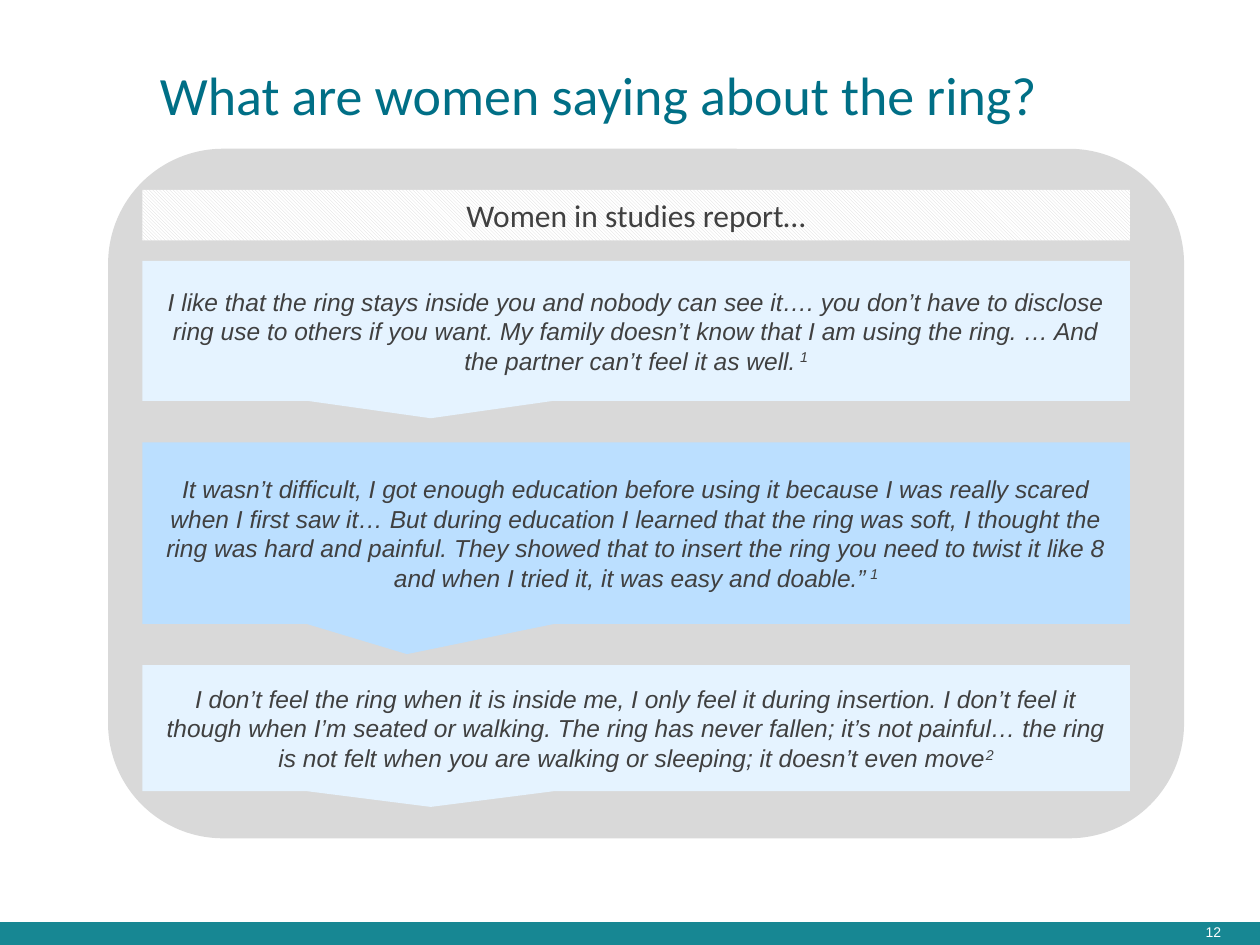
from pptx import Presentation
from pptx.dml.color import RGBColor
from pptx.enum.dml import MSO_PATTERN
from pptx.enum.shapes import MSO_SHAPE as Shape
from pptx.enum.text import MSO_ANCHOR as Anchor, PP_ALIGN as Align
from pptx.util import Cm, Pt

COLOURS = {
    "teal": "178793", "title": "006F86", "panel": "D9D9D9", "white": "FFFFFF",
    "pale": "E5F3FF", "blue": "BBDFFF", "text": "404040",
}
LEFT, WIDTH = 2.87, 19.91  # shared column of the heading and quotes


def colour(name):
    return RGBColor.from_string(COLOURS[name])


class SlideBuilder:
    """Holds the text style and the current slide; lengths are in cm."""

    def __init__(self, slide, heading_font="Calibri", body_font="Arial"):
        self.slide = slide
        self.heading_font = heading_font
        self.body_font = body_font

    def style(self, paragraph, font_name, size, colour_name, align, italic=False):
        paragraph.alignment = align
        for run in paragraph.runs:
            font = run.font
            font.name, font.size, font.italic = font_name, Pt(size), italic
            font.color.rgb = colour(colour_name)

    def title(self, text, left, top, width, height):
        title = self.slide.shapes.title
        title.left, title.top = Cm(left), Cm(top)
        title.width, title.height = Cm(width), Cm(height)
        frame = title.text_frame
        frame.text = text
        frame.vertical_anchor = Anchor.MIDDLE
        frame.paragraphs[0].line_spacing = 0.8
        self.style(frame.paragraphs[0], self.heading_font, 30.8, "title", Align.LEFT)

    def block(self, kind, left, top, width, height, fill):
        block = self.slide.shapes.add_shape(
            kind, Cm(left), Cm(top), Cm(width), Cm(height))
        block.shadow.inherit = False
        block.line.fill.background()
        block.fill.solid()
        block.fill.fore_color.rgb = colour(fill)
        block.text_frame.word_wrap = True
        block.text_frame.vertical_anchor = Anchor.MIDDLE
        return block

    def heading(self, text, top, height):
        heading = self.block(Shape.RECTANGLE, LEFT, top, WIDTH, height, "white")
        heading.fill.patterned()
        heading.fill.pattern = MSO_PATTERN.LIGHT_DOWNWARD_DIAGONAL
        heading.fill.fore_color.rgb = colour("panel")
        heading.fill.back_color.rgb = colour("white")
        heading.text_frame.text = text
        paragraph = heading.text_frame.paragraphs[0]
        paragraph.space_after = Pt(6)
        self.style(paragraph, self.heading_font, 18, "text", Align.CENTER)

    def quote(self, text, reference, top, height, fill, tip=(-0.208, 0.625)):
        quote = self.block(Shape.RECTANGULAR_CALLOUT, LEFT, top, WIDTH, height, fill)
        quote.adjustments[0], quote.adjustments[1] = tip
        quote.text_frame.text = text
        paragraph = quote.text_frame.paragraphs[0]
        mark = paragraph.add_run()
        mark.text = reference
        self.style(paragraph, self.body_font, 14, "text", Align.CENTER, italic=True)
        mark.font._element.set("baseline", "30000")

    def page_number(self, text, left, top, width, height):
        number = self.slide.shapes.add_textbox(
            Cm(left), Cm(top), Cm(width), Cm(height))
        frame = number.text_frame
        frame.word_wrap = True
        frame.margin_top = frame.margin_bottom = 0
        frame.vertical_anchor = Anchor.MIDDLE
        frame.text = text
        self.style(frame.paragraphs[0], self.body_font, 8, "white", Align.RIGHT)


def main():
    deck = Presentation()
    deck.slide_width, deck.slide_height = Cm(25.4), Cm(19.05)
    title_only = deck.slide_layouts[5]
    builder = SlideBuilder(deck.slides.add_slide(title_only))

    # Footer band and page number
    builder.block(Shape.RECTANGLE, 0, 18.59, 25.53, 0.53, "teal")
    builder.page_number("12", 22.38, 18.49, 2.49, 0.61)

    # Title and grey panel
    builder.title("What are women saying about the ring?", 2.97, 1.04, 20.14, 1.96)
    builder.block(Shape.ROUNDED_RECTANGLE, 2.18, 3, 21.69, 13.9, "panel")

    # Heading and quotes
    builder.heading("Women in studies report…", 3.83, 1.02)
    builder.quote(
        "I like that the ring stays inside you and nobody can see it…. you don’t "
        "have to disclose ring use to others if you want. My family doesn’t know "
        "that I am using the ring. … And the partner can’t feel it as well.",
        " 1", 5.26, 2.82, "pale")
    builder.quote(
        "It wasn’t difficult, I got enough education before using it because I was "
        "really scared when I first saw it… But during education I learned that the "
        "ring was soft, I thought the ring was hard and painful. They showed that to "
        "insert the ring you need to twist it like 8 and when I tried it, it was easy "
        "and doable.”",
        " 1", 8.92, 3.66, "blue", tip=(-0.232, 0.666))
    builder.quote(
        "I don’t feel the ring when it is inside me, I only feel it during insertion. "
        "I don’t feel it though when I’m seated or walking. The ring has never fallen; "
        "it’s not painful… the ring is not felt when you are walking or sleeping; it "
        "doesn’t even move",
        "2", 13.41, 2.54, "pale")

    deck.save("out.pptx")


if __name__ == "__main__":
    main()
